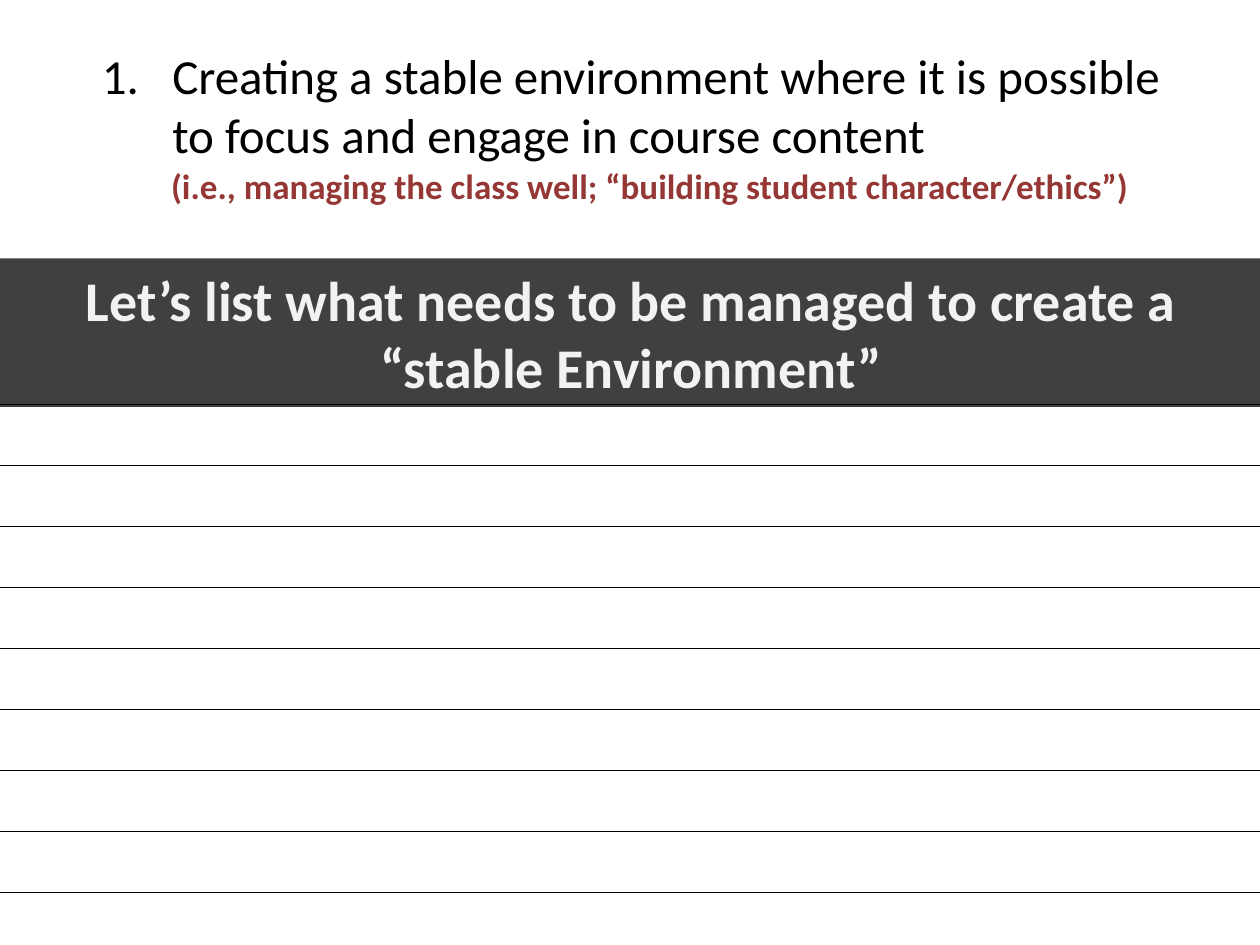
from dataclasses import dataclass

from lxml.etree import SubElement
from pptx import Presentation
from pptx.dml.color import RGBColor
from pptx.enum.shapes import MSO_CONNECTOR, MSO_SHAPE
from pptx.enum.text import MSO_AUTO_SIZE, PP_ALIGN
from pptx.oxml.ns import qn
from pptx.util import Inches, Pt

FONT = "Calibri"
SLIDE_WIDTH, SLIDE_HEIGHT = 10, 7.5
FIRST_RULE, LAST_RULE, RULE_COUNT = 3.21, 7.08, 9


@dataclass
class Block:
    text: str
    left: float
    top: float
    width: float
    height: float
    size: int
    color: str
    bold: bool = False
    fill: str = ""
    align: PP_ALIGN = PP_ALIGN.LEFT


def rgb(value: str) -> RGBColor:
    return RGBColor.from_string(value)


def add_block(shapes, block: Block):
    """Add a text box, or a rectangle when the block has a fill."""
    box = [Inches(n) for n in (block.left, block.top, block.width, block.height)]
    if block.fill:
        shape = shapes.add_shape(MSO_SHAPE.RECTANGLE, *box)
        shape.shadow.inherit = False
        shape.fill.solid()
        shape.fill.fore_color.rgb = rgb(block.fill)
        shape.line.fill.background()
    else:
        shape = shapes.add_textbox(*box)
    frame = shape.text_frame
    frame.word_wrap = True
    frame.auto_size = MSO_AUTO_SIZE.SHAPE_TO_FIT_TEXT
    frame.text = block.text
    paragraph = frame.paragraphs[0]
    paragraph.alignment = block.align
    font = paragraph.runs[0].font
    font.name, font.size, font.bold = FONT, Pt(block.size), block.bold
    font.color.rgb = rgb(block.color)
    return paragraph


def number_paragraph(paragraph, indent: float) -> None:
    properties = paragraph._p.get_or_add_pPr()
    properties.set("marL", str(Inches(indent)))
    properties.set("indent", str(Inches(-indent)))
    SubElement(properties, qn("a:buFont"), typeface="+mj-lt")
    SubElement(properties, qn("a:buAutoNum"), type="arabicPeriod")


def add_rule(shapes, y: float) -> None:
    rule = shapes.add_connector(
        MSO_CONNECTOR.STRAIGHT, Inches(0), Inches(y), Inches(SLIDE_WIDTH), Inches(y))
    rule.line.color.rgb = rgb("000000")
    rule.line.width = Pt(0.5)
    SubElement(rule._element.spPr, qn("a:effectLst"))


def main() -> None:
    deck = Presentation()
    deck.slide_width, deck.slide_height = Inches(SLIDE_WIDTH), Inches(SLIDE_HEIGHT)
    shapes = deck.slides.add_slide(deck.slide_layouts[6]).shapes

    # Numbered goal and its explanation
    goal = add_block(shapes, Block(
        "Creating a stable environment where it is possible to focus and engage "
        "in course content", 0.71, 0.31, 8.63, 1.04, 28, "000000"))
    number_paragraph(goal, 0.56)
    add_block(shapes, Block(
        "(i.e., managing the class well; “building student character/ethics”)",
        1.26, 1.26, 8.44, 0.44, 20, "953735", bold=True))

    # Prompt banner
    add_block(shapes, Block(
        "Let’s list what needs to be managed to create a “stable Environment”",
        0, 2.05, 10.02, 1.18, 32, "F2F2F2", bold=True, fill="404040",
        align=PP_ALIGN.CENTER))

    # Ruled writing lines
    writing_lines = shapes.add_group_shape().shapes
    gap = (LAST_RULE - FIRST_RULE) / (RULE_COUNT - 1)
    for index in range(RULE_COUNT):
        add_rule(writing_lines, FIRST_RULE + index * gap)

    deck.save("out.pptx")


if __name__ == "__main__":
    main()
